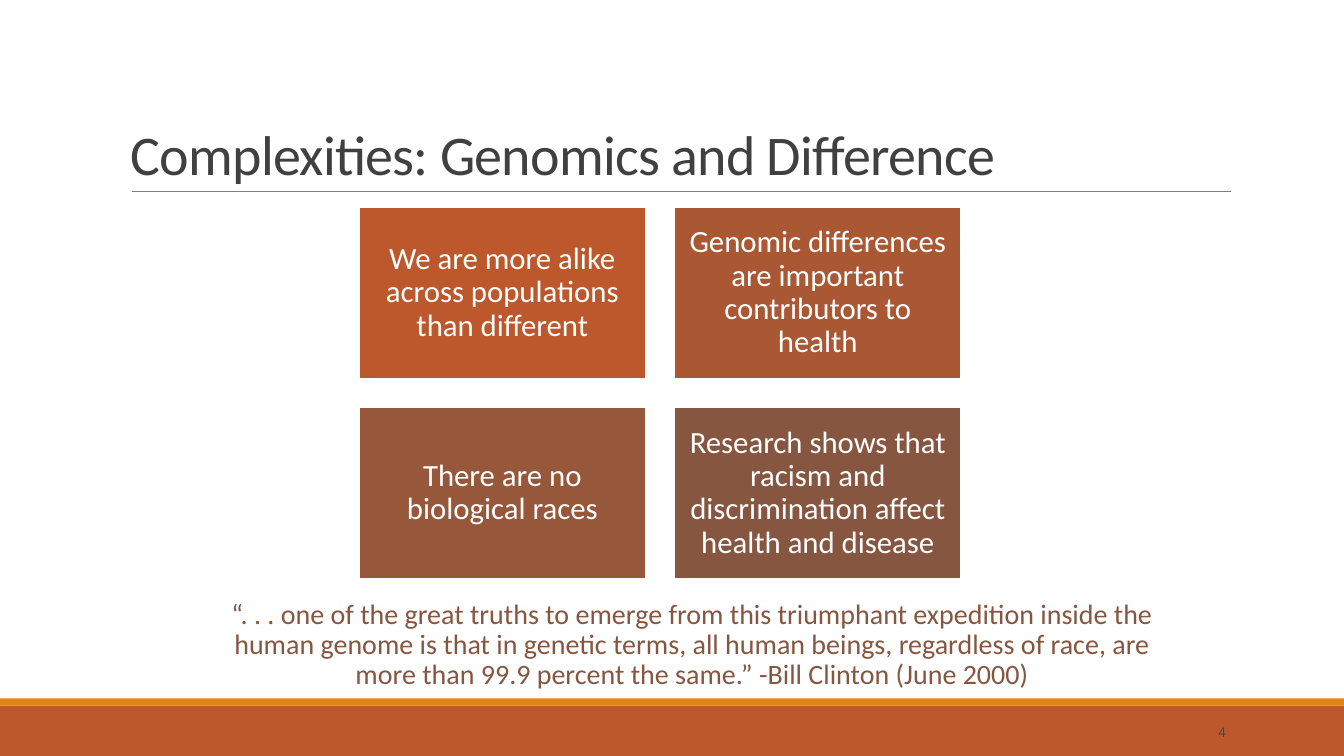
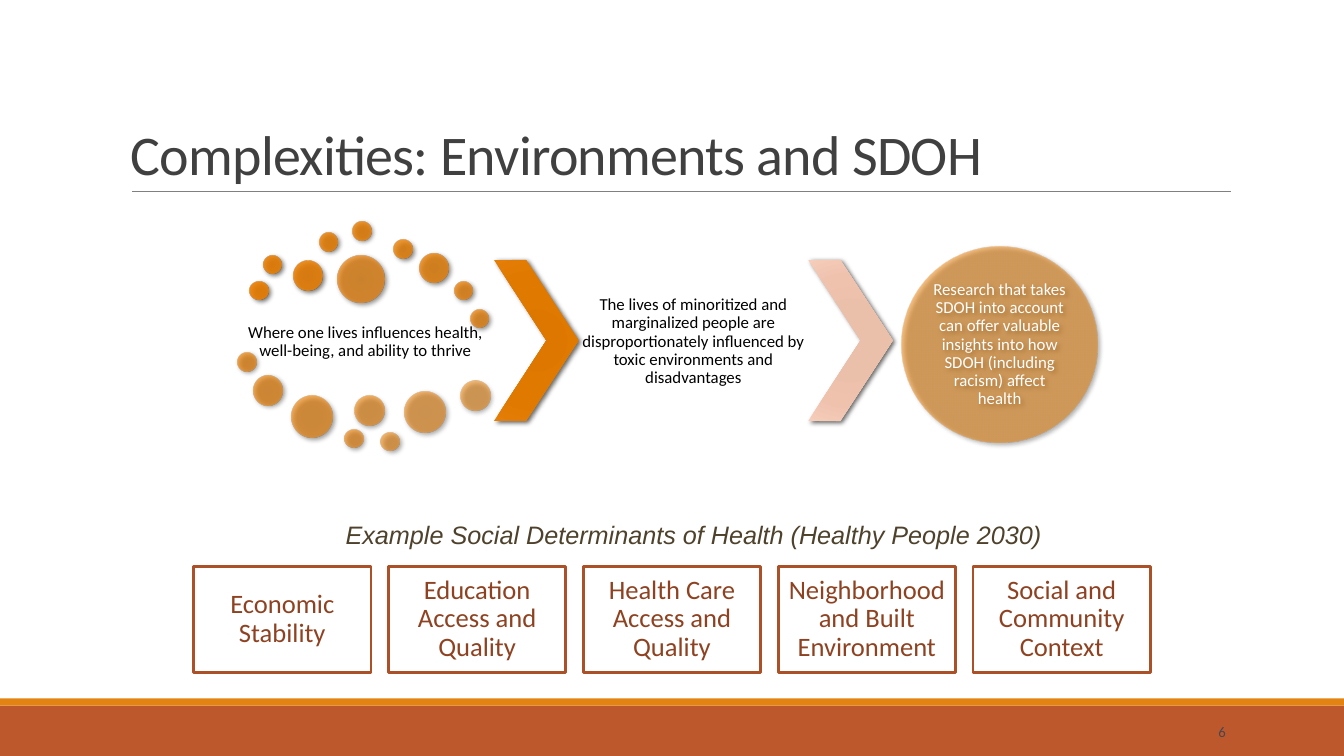
from lxml.etree import SubElement
from pptx import Presentation
from pptx.dml.color import RGBColor
from pptx.enum.shapes import MSO_CONNECTOR, MSO_SHAPE
from pptx.enum.text import MSO_ANCHOR, PP_ALIGN
from pptx.oxml import parse_xml
from pptx.oxml.ns import nsdecls, qn
from pptx.util import Cm, Pt

# Shared palette and font
RUST, ORANGE, WHITE, BLACK = "BD582C", "E48312", "FFFFFF", "000000"
TITLE_GREY, RULE_GREY, NUMBER_GREY = "404040", "808080", "464653"
FONT = "Calibri"
SLIDE_WIDTH, SLIDE_HEIGHT = 33.87, 19.05

# Gradient stops: position in percent, colour
DOT_STOPS = [(0, "E57B00"), (34, "E87D00"), (70, "EB7E00"), (100, "EF8407")]
DARK_STOPS = [(0, "DB7600"), (34, "DD7700"), (70, "E07900"), (100, "E47E07")]
PALE_STOPS = [(0, "E9BDA9"), (34, "EAC0AB"), (70, "EFC2AD"), (100, "F5CDBA")]

TILES = [
    ("We are more alike across populations than different", "BD582C"),
    ("Genomic differences are important contributors to health", "AA5834"),
    ("There are no biological races", "97573A"),
    ("Research shows that racism and discrimination affect health and disease", "865640"),
]
QUOTE = (
    "“. . . one of the great truths to emerge from this triumphant expedition inside "
    "the human genome is that in genetic terms, all human beings, regardless of race, "
    "are more than 99.9 percent the same.” -Bill Clinton (June 2000)"
)

# Dots around the first step: left, top, diameter
SMALL, MEDIUM, LARGE, HUB = 0.46, 0.74, 1.04, 1.19
DOTS = [
    (6.3, 7.09, SMALL), (6.63, 6.43, SMALL), (7.39, 6.58, MEDIUM),
    (8.05, 5.87, SMALL), (8.89, 5.59, SMALL), (9.93, 6.05, SMALL),
    (10.57, 6.38, MEDIUM), (11.46, 7.09, SMALL), (11.86, 7.8, SMALL),
    (8.51, 6.43, HUB), (5.99, 8.89, SMALL), (6.38, 9.47, MEDIUM),
    (7.34, 9.98, LARGE), (8.69, 10.82, SMALL), (8.94, 9.98, MEDIUM),
    (9.6, 10.9, SMALL), (10.19, 9.86, LARGE), (11.61, 9.6, MEDIUM),
]
DETERMINANTS = [
    "Economic Stability",
    "Education Access and Quality",
    "Health Care Access and Quality",
    "Neighborhood and Built Environment",
    "Social and Community Context",
]


def rgb(value):
    return RGBColor.from_string(value)


def write(shape, text, size, color, align=PP_ALIGN.CENTER, anchor=MSO_ANCHOR.MIDDLE,
          inset=(0.25, 0.13), spacing=0.9, font=FONT, italic=False):
    """Fill a shape or text box with one paragraph and return it."""
    frame = shape.text_frame
    frame.word_wrap = True
    frame.vertical_anchor = anchor
    frame.margin_left = frame.margin_right = Cm(inset[0])
    frame.margin_top = frame.margin_bottom = Cm(inset[1])
    para = frame.paragraphs[0]
    para.text = text
    para.alignment = align
    para.line_spacing = spacing
    para.font.name = font
    para.font.size = Pt(size)
    para.font.italic = italic
    para.font.color.rgb = rgb(color)
    return para


def add_text(page, place, text, size, color, **style):
    box = page.shapes.add_textbox(*map(Cm, place))
    return write(box, text, size, color, **style)


def add_block(page, place, fill=None, line=None, width=1, kind=MSO_SHAPE.RECTANGLE):
    block = page.shapes.add_shape(kind, *map(Cm, place))
    block.shadow.inherit = False
    if fill:
        block.fill.solid()
        block.fill.fore_color.rgb = rgb(fill)
    if line:
        block.line.color.rgb = rgb(line)
        block.line.width = Pt(width)
    else:
        block.line.fill.background()
    return block


def add_glossy(page, place, kind, stops, alpha=100):
    """Shape with a radial, possibly translucent gradient and a soft shadow."""
    shape = add_block(page, place, kind=kind)
    stop_xml = "".join(
        f'<a:gs pos="{position * 1000}"><a:srgbClr val="{color}">'
        f'<a:alpha val="{round(alpha * 1000)}"/></a:srgbClr></a:gs>'
        for position, color in stops
    )
    gradient = parse_xml(
        f'<a:gradFill {nsdecls("a")} rotWithShape="1"><a:gsLst>{stop_xml}</a:gsLst>'
        '<a:path path="circle"><a:fillToRect l="100000" t="100000" r="100000" b="100000"/>'
        "</a:path></a:gradFill>"
    )
    properties = shape._element.spPr
    properties.find(qn("a:prstGeom")).addnext(gradient)
    shadow = SubElement(properties.find(qn("a:effectLst")), qn("a:outerShdw"),
                        blurRad=str(Pt(3.5)), dist=str(Pt(2)), dir="2700000",
                        algn="tl", rotWithShape="0")
    color = SubElement(shadow, qn("a:srgbClr"), val=BLACK)
    SubElement(color, qn("a:alpha"), val="60000")
    return shape


def add_page(deck, title, number):
    """Blank slide with bands, title, rule and page number."""
    page = deck.slides.add_slide(deck.slide_layouts[6])
    add_block(page, (0, 17.78, SLIDE_WIDTH, 1.27), RUST)
    add_block(page, (0, 17.6, SLIDE_WIDTH, 0.18), ORANGE)
    rule = page.shapes.add_connector(MSO_CONNECTOR.STRAIGHT, Cm(3.33), Cm(4.83), Cm(31.01), Cm(4.83))
    rule.line.color.rgb = rgb(RULE_GREY)
    rule.line.width = Pt(0.5)
    SubElement(rule._element.spPr, qn("a:effectLst"))
    heading = add_text(page, (3.05, 0.79, 27.94, 4.04), title, 40, TITLE_GREY,
                       align=PP_ALIGN.LEFT, anchor=MSO_ANCHOR.BOTTOM, spacing=0.85)
    heading.runs[0]._r.get_or_add_rPr().set("spc", "-50")
    add_text(page, (27.51, 17.93, 3.63, 1.02), str(number), 10.5, NUMBER_GREY,
             align=PP_ALIGN.RIGHT, spacing=1)
    return page


def build_genomics(deck):
    page = add_page(deck, "Complexities: Genomics and Difference", 4)
    # Two by two grid of statements
    for index, (text, fill) in enumerate(TILES):
        row, column = divmod(index, 2)
        place = (9.05 + column * 7.95, 5.21 + row * 5.05, 7.22, 4.34)
        tile = add_block(page, place, fill, WHITE, 1.25)
        write(tile, text, 22, WHITE, inset=(0.23, 0.23))
    # Quotation
    add_text(page, (5.28, 14.99, 24.33, 2.6), QUOTE, 20, "865640",
             anchor=MSO_ANCHOR.TOP, inset=(0, 0.13))


def build_environments(deck):
    page = add_page(deck, "Complexities: Environments and SDOH", 6)
    # First step: text ringed by dots that fade from 90 to 50 percent
    add_text(page, (5.97, 7.67, 6.48, 1.9),
             "Where one lives influences health, well-being, and ability to thrive",
             12, BLACK, inset=(0.05, 0.05))
    for index, (left, top, size) in enumerate(DOTS):
        add_glossy(page, (left, top, size, size), MSO_SHAPE.OVAL, DOT_STOPS,
                   90 - 40 * index / len(DOTS))
    # Chevrons around the second step
    for left, stops in ((12.45, DARK_STOPS), (20.37, PALE_STOPS)):
        chevron = add_glossy(page, (left, 6.55, 2.13, 4.06), MSO_SHAPE.CHEVRON, stops)
        chevron.adjustments[0] = 0.62
    add_text(page, (14.58, 6.58, 5.79, 4.06),
             "The lives of minoritized and marginalized people are disproportionately "
             "influenced by toxic environments and disadvantages",
             12, BLACK, inset=(0.05, 0.05))
    # Result
    result = add_glossy(page, (22.73, 6.22, 4.93, 4.93), MSO_SHAPE.OVAL, DOT_STOPS, 50)
    write(result, "Research that takes SDOH into account can offer valuable insights into "
          "how SDOH (including racism) affect health", 12, WHITE, inset=(0, 0))
    # Row of determinants
    for index, text in enumerate(DETERMINANTS):
        card = add_block(page, (4.88 + index * 4.91, 14.27, 4.47, 2.67), WHITE, "AC5028", 2)
        write(card, text, 19, "8E4221", inset=(0.2, 0.2))
    add_text(page, (8.46, 12.95, 18.39, 1.02),
             "Example Social Determinants of Health (Healthy People 2030)", 18, "4E422C",
             align=PP_ALIGN.LEFT, anchor=MSO_ANCHOR.TOP, spacing=1, font="Arial", italic=True)


def main():
    deck = Presentation()
    deck.slide_width, deck.slide_height = Cm(SLIDE_WIDTH), Cm(SLIDE_HEIGHT)
    build_genomics(deck)
    build_environments(deck)
    deck.save("out.pptx")


if __name__ == "__main__":
    main()
